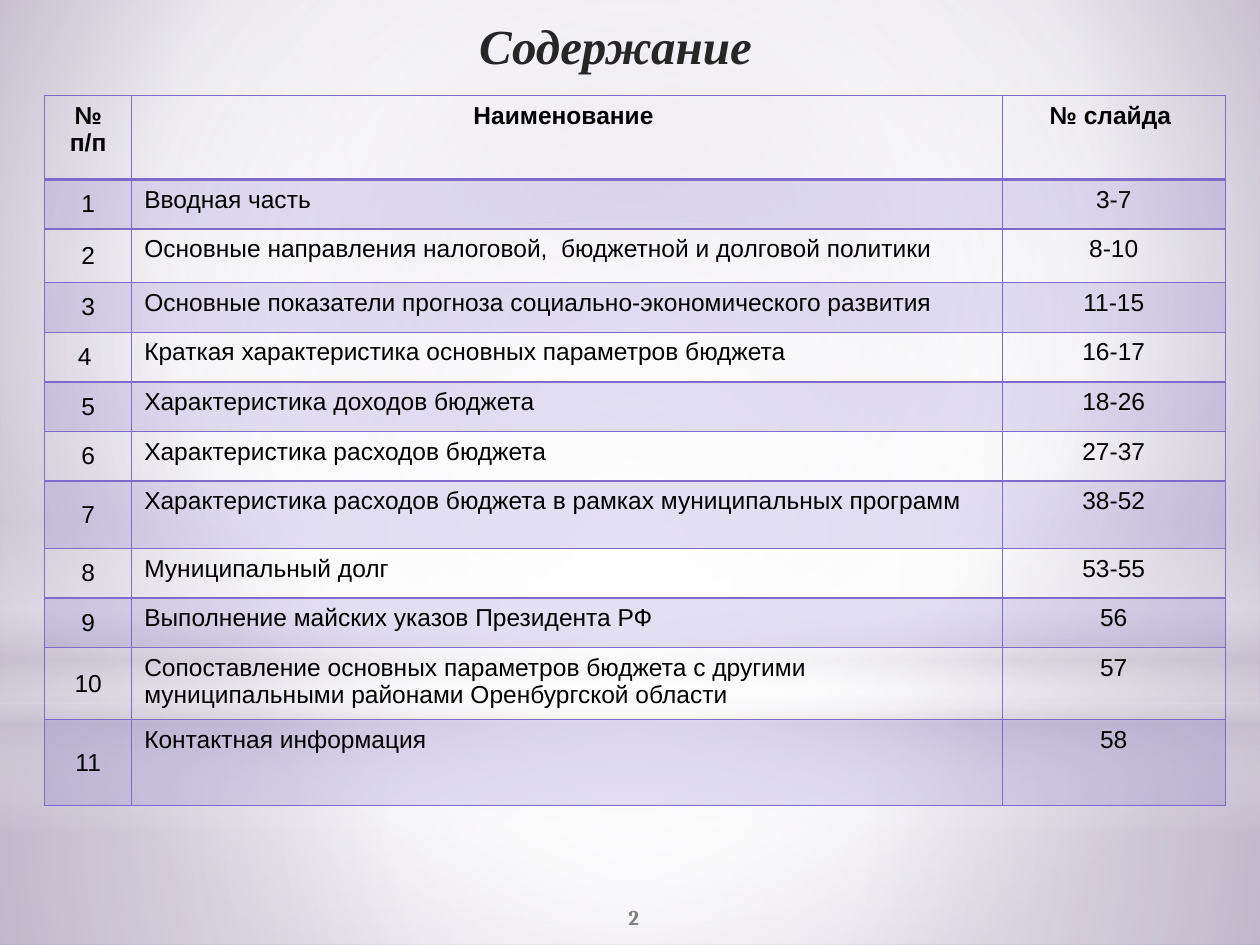
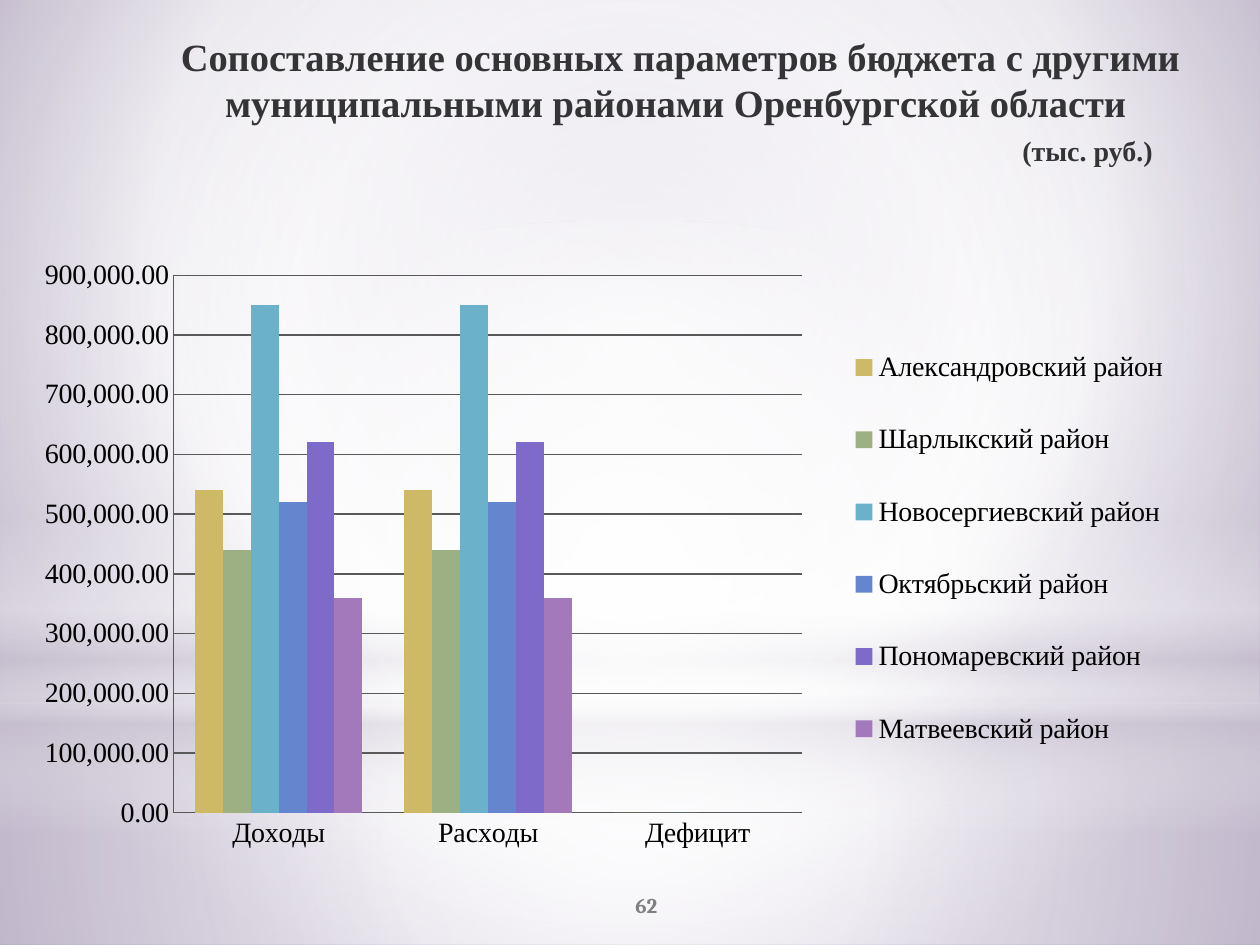
from pptx import Presentation
from pptx.chart.data import CategoryChartData
from pptx.dml.color import RGBColor
from pptx.enum.chart import XL_CHART_TYPE, XL_LEGEND_POSITION, XL_TICK_MARK
from pptx.enum.shapes import MSO_SHAPE
from pptx.enum.text import MSO_ANCHOR, MSO_AUTO_SIZE, PP_ALIGN
from pptx.oxml import parse_xml
from pptx.oxml.ns import nsdecls, qn
from pptx.util import Inches, Pt

LEFT, CENTER = PP_ALIGN.LEFT, PP_ALIGN.CENTER
TOP, MIDDLE = MSO_ANCHOR.TOP, MSO_ANCHOR.MIDDLE
RECTANGLE, OVAL = MSO_SHAPE.RECTANGLE, MSO_SHAPE.OVAL
NO_TICK = XL_TICK_MARK.NONE

BLACK = RGBColor(0x00, 0x00, 0x00)
INK = RGBColor(0x26, 0x26, 0x26)
TITLE_GRAY = RGBColor(0x34, 0x34, 0x36)
PAGE_GRAY = RGBColor(0x80, 0x80, 0x80)
GRID_GRAY = RGBColor(0x59, 0x59, 0x59)
WHITE = RGBColor(0xFF, 0xFF, 0xFF)
HAZE = RGBColor(0xC9, 0xC2, 0xD1)
LILAC = RGBColor(0xC1, 0xB7, 0xCD)
MAUVE = RGBColor(0xA1, 0x91, 0xB5)
GOLD = RGBColor(0xCE, 0xB9, 0x66)
GREEN = RGBColor(0x9C, 0xB0, 0x84)
TEAL = RGBColor(0x6B, 0xB1, 0xC9)
BLUE = RGBColor(0x65, 0x85, 0xCF)
VIOLET = RGBColor(0x7E, 0x6B, 0xC9)
PLUM = RGBColor(0xA3, 0x79, 0xBB)
SERIF = "Times New Roman"

# The slide is a grid of 100 columns by 75 rows
deck = Presentation()
deck.slide_width, deck.slide_height = Inches(10), Inches(7.5)
COLUMN, ROW = deck.slide_width / 100, deck.slide_height / 75


def area(left, top, width, height):
    return [round(n) for n in (left * COLUMN, top * ROW, width * COLUMN, height * ROW)]


def write(para, text, size=14, font="Arial", color=BLACK, bold=False,
          italic=False, align=CENTER):
    para.alignment = align
    span = para.add_run()
    span.text = text
    span.font.name, span.font.size = font, Pt(size)
    span.font.bold, span.font.italic = bold, italic
    span.font.color.rgb = color


# Shared backdrop on the master: background, then four soft panels
master = deck.slide_master
contents, comparison = [deck.slides.add_slide(deck.slide_layouts[5]) for _ in range(2)]
centre = (50, 50, 50, 50)
panels = [
    (None, None, (20, 10, 20, 60),
     [(0, LILAC, 100), (60, WHITE, 100), (100, MAUVE, 100)]),
    (RECTANGLE, (0, 55.8, 100, 19.2), centre,
     [(0, WHITE, 91), (37, WHITE, 76), (100, HAZE, 79)]),
    (RECTANGLE, (0, 0, 100, 55.8), centre,
     [(0, WHITE, 89), (48, WHITE, 62), (100, HAZE, 79)]),
    (RECTANGLE, (0, 41.2, 100, 25), None,
     [(0, WHITE, 0), (29, WHITE, 30), (45, HAZE, 40), (55, WHITE, 26),
      (65, HAZE, 60), (100, WHITE, 0)]),
    (OVAL, (0, 17.5, 100, 55.8), centre, [(0, WHITE, 100), (56, WHITE, 0)]),
]
for order, (outline, place, focus, stops) in enumerate(panels):
    if outline is None:
        master.background.fill.solid()
        properties = master.element.cSld.find(qn("p:bg")).find(qn("p:bgPr"))
    else:
        panel = contents.shapes.add_shape(outline, *area(*place))
        panel.shadow.inherit = False
        panel.line.fill.background()
        panel.fill.solid()
        panel.name = f"Backdrop {order}"
        panel.element.nvSpPr.cNvPr.set("id", str(20 + order))
        master.element.cSld.spTree.insert(1 + order, panel.element)
        properties = panel.element.spPr
    marks = "".join(
        f'<a:gs pos="{share * 1000}"><a:srgbClr val="{color}">'
        f'<a:alpha val="{alpha * 1000}"/></a:srgbClr></a:gs>'
        for share, color, alpha in stops)
    if focus:
        sides = " ".join(f'{side}="{n * 1000}"' for side, n in zip("ltrb", focus))
        direction = f'<a:path path="circle"><a:fillToRect {sides}/></a:path>'
    else:
        direction = '<a:lin ang="5400000" scaled="0"/>'
    gradient = parse_xml(f'<a:gradFill {nsdecls("a")} rotWithShape="1">'
                         f'<a:gsLst>{marks}</a:gsLst>{direction}</a:gradFill>')
    properties.replace(properties.find(qn("a:solidFill")), gradient)

# Title frames and page numbers
for page, title_place, number, number_place in [
    (contents, (31.9, 0.7, 33.9, 5.7), "2", (40.3, 70.8, 20, 4)),
    (comparison, (13, 2.1, 82, 11.7), "62", (41.3, 69.8, 20, 4)),
]:
    title = page.shapes.title
    title.left, title.top, title.width, title.height = area(*title_place)
    title.text_frame.auto_size = MSO_AUTO_SIZE.NONE
    title.text_frame.vertical_anchor = TOP
    box = page.shapes.add_textbox(*area(*number_place))
    box.text_frame.word_wrap = True
    box.text_frame.vertical_anchor = MIDDLE
    write(box.text_frame.paragraphs[0], number, size=12, font="Cambria",
          color=PAGE_GRAY, bold=True)

# Slide 1: table of contents
write(contents.shapes.title.text_frame.paragraphs[0], "Содержание", size=28,
      font=SERIF, color=INK, bold=True, italic=True)
entries = [
    ("№ п/п", "Наименование ", "№ слайда "),
    ("1", "Вводная часть", "3-7"),
    ("2", "Основные направления налоговой,  бюджетной и долговой политики ", "8-10"),
    ("3", "Основные показатели прогноза социально-экономического развития", "11-15"),
    ("4 ", "Краткая характеристика основных параметров бюджета", "16-17"),
    ("5", "Характеристика доходов бюджета", "18-26"),
    ("6", "Характеристика расходов бюджета", "27-37"),
    ("7", "Характеристика расходов бюджета в рамках муниципальных программ", "38-52"),
    ("8", "Муниципальный долг", "53-55"),
    ("9", "Выполнение майских указов Президента РФ", "56"),
    ("10", "Сопоставление основных параметров бюджета с другими "
           "муниципальными районами Оренбургской области", "57"),
    ("11", "Контактная информация", "58"),
]
special_heights = {0: 6.65, 2: 4.25, 7: 5.35, 10: 5.7, 11: 6.85}
table = contents.shapes.add_table(len(entries), 3, *area(3.55, 7.6, 93.7, 56.3)).table
table.first_row = table.horz_banding = False
for column, width in zip(table.columns, (6.9, 69.1, 17.7)):
    column.width = round(width * COLUMN)
for r, entry in enumerate(entries):
    table.rows[r].height = round(special_heights.get(r, 3.94) * ROW)
    for c, text in enumerate(entry):
        cell = table.cell(r, c)
        cell.vertical_anchor = MIDDLE if r and c == 0 else TOP
        write(cell.text_frame.paragraphs[0], text, bold=r == 0,
              align=LEFT if r and c == 1 else CENTER)
        if r % 2:
            cell.fill.solid()
            cell.fill.fore_color.rgb = VIOLET
        else:
            cell.fill.background()
        properties = cell._tc.get_or_add_tcPr()
        for tint in properties.iter(qn("a:srgbClr")):
            tint.append(parse_xml(f'<a:alpha {nsdecls("a")} val="20000"/>'))
        for position, side in enumerate("LRTB"):
            heavy = (r, side) in ((0, "B"), (1, "T"))
            properties.insert(position, parse_xml(
                f'<a:ln{side} {nsdecls("a")} w="{Pt(2 if heavy else 1)}">'
                f'<a:solidFill><a:srgbClr val="{VIOLET}"/></a:solidFill></a:ln{side}>'))

# Slide 2: title with its unit line
heading = comparison.shapes.title.text_frame
write(heading.paragraphs[0], "Сопоставление основных параметров бюджета с другими "
      "муниципальными районами Оренбургской области ",
      size=22, font=SERIF, color=TITLE_GRAY, bold=True)
unit = heading.add_paragraph()
unit.space_before = Pt(5)
write(unit, "(тыс. руб.)", size=16, font=SERIF, color=TITLE_GRAY, bold=True, align=LEFT)
unit_properties = unit._p.get_or_add_pPr()
unit_properties.set("marL", str(round(67.15 * COLUMN)))
unit_properties.set("indent", "0")

# Slide 2: districts compared in a column chart
districts = [
    ("Александровский район", 540000, 0, GOLD),
    ("Шарлыкский район", 440000, 0, GREEN),
    ("Новосергиевский район", 850000, 0, TEAL),
    ("Октябрьский район", 520000, None, BLUE),
    ("Пономаревский район", 620000, None, VIOLET),
    ("Матвеевский район", 360000, None, PLUM),
]
data = CategoryChartData(number_format="#,##0.00")
data.categories = ["Доходы", "Расходы", "Дефицит"]
for name, budget, deficit, _ in districts:
    data.add_series(name, (budget, budget, deficit))
chart = comparison.shapes.add_chart(
    XL_CHART_TYPE.COLUMN_CLUSTERED, *area(2.35, 20.3, 93.8, 51.6), data).chart
chart.has_title = False
chart.font.name, chart.font.size = SERIF, Pt(16)
chart.font.color.rgb = BLACK
plot = chart.plots[0]
plot.gap_width, plot.overlap, plot.vary_by_categories = 150, 0, False
for series, (*_, color) in zip(plot.series, districts):
    series.format.fill.solid()
    series.format.fill.fore_color.rgb = color
    series.invert_if_negative = False

values = chart.value_axis
values.minimum_scale, values.maximum_scale, values.major_unit = 0, 900000, 100000
values.tick_labels.number_format = "#,##0.00"
values.tick_labels.number_format_is_linked = False
values.has_major_gridlines = True
for axis in (values, chart.category_axis):
    axis.major_tick_mark = axis.minor_tick_mark = NO_TICK
for ruled in (values, chart.category_axis, values.major_gridlines):
    ruled.format.line.color.rgb = GRID_GRAY
    ruled.format.line.width = Pt(0.75)

chart.has_legend = True
chart.legend.position = XL_LEGEND_POSITION.RIGHT
chart.legend.include_in_layout = False

# Fixed places of the plot and the legend, in percent of the chart
plot_area = chart.element.find(".//" + qn("c:plotArea"))
legend = chart.element.find(".//" + qn("c:legend"))
for part, position, target, shares in [
    (plot_area, 0, '<c:layoutTarget val="inner"/>', (12.2, 3, 53.2, 82.7)),
    (legend, 1, "", (68.4, 8.5, 29, 73)),
]:
    for previous in part.findall(qn("c:layout")):
        part.remove(previous)
    sizes = "".join(f'<c:{key} val="{share / 100:.3f}"/>'
                    for key, share in zip("xywh", shares))
    part.insert(position, parse_xml(
        f'<c:layout {nsdecls("c")}><c:manualLayout>{target}<c:xMode val="edge"/>'
        f'<c:yMode val="edge"/>{sizes}</c:manualLayout></c:layout>'))

deck.save("out.pptx")
